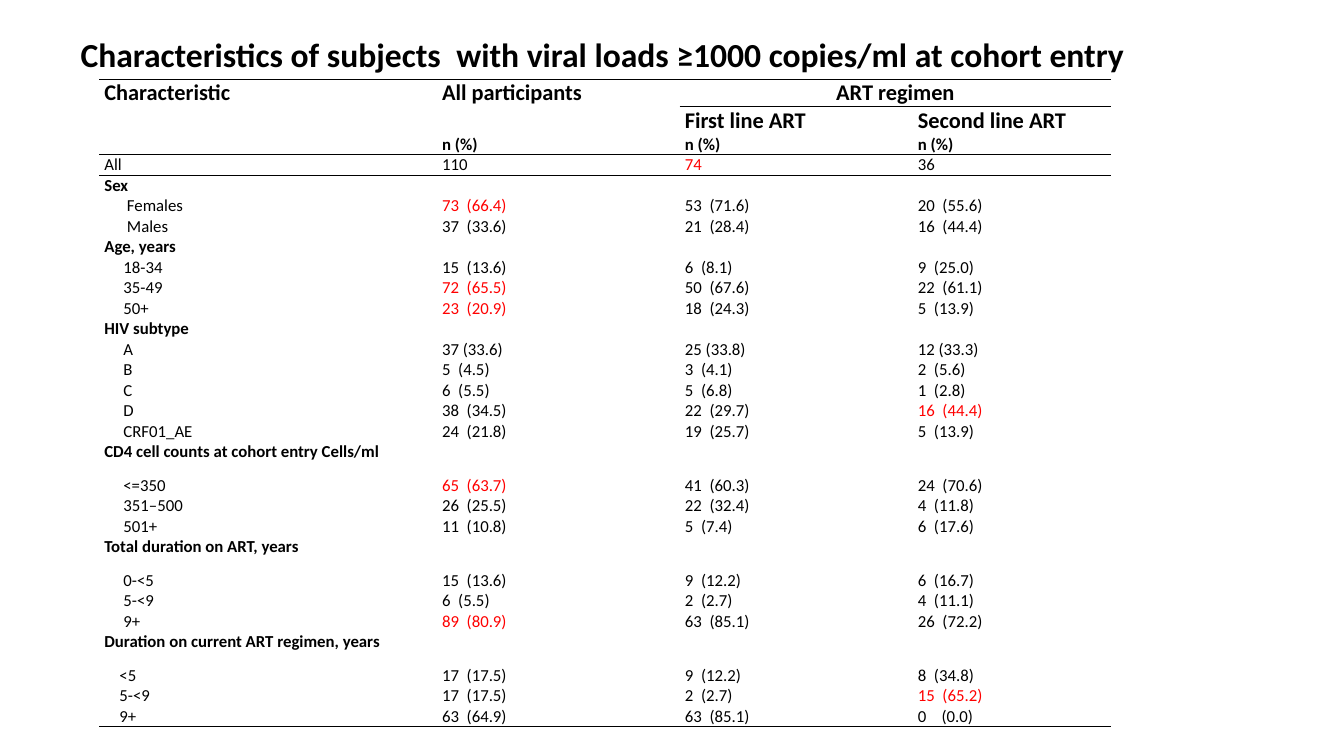
import dataclasses
import typing

import lxml.etree
import pptx
import pptx.dml.color
import pptx.enum.text
import pptx.oxml.ns
import pptx.util

Cm = pptx.util.Cm
Pt = pptx.util.Pt
ALIGN = pptx.enum.text.PP_ALIGN
BLACK = pptx.dml.color.RGBColor(0, 0, 0)
RED = pptx.dml.color.RGBColor(255, 0, 0)
FONT = "Calibri"
SPACE = 0.226
PLAIN = "{2D5ABB26-0587-4C30-8999-92F81FD0307C}"
WIDTHS = (8.51, 6.12, 5.87, 5.0)
RULES = {0: (0, 1, 2, 3), 1: (2, 3), 3: (0, 1, 2, 3), 4: (0, 1, 2, 3), 29: (0, 1, 2, 3)}


@dataclasses.dataclass
class Row:
    texts: tuple[str, ...]
    size: int = 12
    bold: bool = False
    indent: float = 0
    reds: tuple[int, ...] = ()
    height: float = 0.43


def head(*texts: str, size: int = 16) -> Row:
    return Row(texts, size, bold=True)


def group(text: str, height: float = 0.43) -> Row:
    return Row((text, "", "", ""), bold=True, height=height)


def item(*texts: str, reds: tuple[int, ...] = (), indent: float = 0.48) -> Row:
    return Row(texts, indent=indent, reds=reds)


ROWS = [
    head("Characteristic", "All participants", "ART regimen", ""),
    head("", "", "First line ART", "Second line ART"),
    head("", "n (%)", "n (%)", "n (%)", size=12),
    item("All", "110", "74", "36", reds=(2,), indent=0),
    group("Sex"),
    item("Females", "73|(66.4)", "53|(71.6)", "20|(55.6)", reds=(1,), indent=0.57),
    item("Males", "37|(33.6)", "21|(28.4)", "16|(44.4)", indent=0.57),
    group("Age, years"),
    item("18-34", "15|(13.6)", "6|(8.1)", "9|(25.0)"),
    item("35-49", "72|(65.5)", "50|(67.6)", "22|(61.1)", reds=(1,)),
    item("50+", "23|(20.9)", "18|(24.3)", "5|(13.9)", reds=(1,)),
    group("HIV subtype"),
    item("A", "37 (33.6)", "25 (33.8)", "12 (33.3)"),
    item("B", "5|(4.5)", "3|(4.1)", "2|(5.6)"),
    item("C", "6|(5.5)", "5|(6.8)", "1|(2.8)"),
    item("D", "38|(34.5)", "22|(29.7)", "16|(44.4)", reds=(3,)),
    item("CRF01_AE", "24|(21.8)", "19|(25.7)", "5|(13.9)"),
    group("CD4 cell counts at cohort entry Cells/ml", 0.84),
    item("<=350", "65|(63.7)", "41|(60.3)", "24|(70.6)", reds=(1,)),
    item("351–500", "26|(25.5)", "22|(32.4)", "4|(11.8)"),
    item("501+", "11|(10.8)", "5|(7.4)", "6|(17.6)"),
    group("Total duration on ART, years", 0.84),
    item("0-<5", "15|(13.6)", "9|(12.2)", "6|(16.7)"),
    item("5-<9", "6|(5.5)", "2|(2.7)", "4|(11.1)"),
    item("9+", "89|(80.9)", "63|(85.1)", "26|(72.2)", reds=(1,)),
    group("Duration on current ART regimen, years", 0.84),
    item("<5", "17|(17.5)", "9|(12.2)", "8|(34.8)", indent=0.38),
    item("5-<9", "17|(17.5)", "2|(2.7)", "15|(65.2)", reds=(3,), indent=0.38),
    item("9+", "63|(64.9)", "63|(85.1)", "0|||(0.0)", indent=0.38),
]


def write(para: typing.Any, text: str, size: int, bold: bool,
          color: pptx.dml.color.RGBColor = BLACK) -> None:
    first, mark, last = text.partition("|")
    for part in (first, " " if mark else "", last.lstrip("|")):
        if not part:
            continue
        run = para.add_run()
        run.text = part
        run.font.name = FONT
        run.font.size = Pt(size)
        run.font.bold = bold
        run.font.color.rgb = color
        if part == " ":
            extra = text.count("|") * SPACE * size
            run.font._element.set("spc", str(round(extra * 100)))


def rule(cell: typing.Any, tag: str, shown: bool) -> None:
    line = lxml.etree.SubElement(cell._tc.get_or_add_tcPr(), pptx.oxml.ns.qn(tag))
    line.set("w", str(Pt(1)))
    kind = "a:solidFill" if shown else "a:noFill"
    fill = lxml.etree.SubElement(line, pptx.oxml.ns.qn(kind))
    if shown:
        lxml.etree.SubElement(fill, pptx.oxml.ns.qn("a:srgbClr")).set("val", str(BLACK))


def fill_cell(cell: typing.Any, row: Row, num: int, col: int) -> None:
    cell.margin_left = cell.margin_right = Cm(0.13)
    cell.margin_top = cell.margin_bottom = 0
    para = cell.text_frame.paragraphs[0]
    if col == 0 and row.indent:
        props = para._p.get_or_add_pPr()
        props.set("marL", str(Cm(row.indent)))
        props.set("indent", "0")
    if row.texts[col]:
        write(para, row.texts[col], row.size, row.bold, RED if col in row.reds else BLACK)
    else:
        end = lxml.etree.SubElement(para._p, pptx.oxml.ns.qn("a:endParaRPr"))
        end.set("sz", "1200")
    rule(cell, "a:lnL", False)
    rule(cell, "a:lnR", False)
    rule(cell, "a:lnT", col in RULES.get(num, ()))
    rule(cell, "a:lnB", col in RULES.get(num + 1, ()))
    cell.fill.background()


def add_title(slide: typing.Any) -> None:
    box = slide.shapes.add_textbox(Cm(1.78), Cm(0.79), Cm(28.58), Cm(1.22))
    frame = box.text_frame
    frame.word_wrap = True
    frame.vertical_anchor = pptx.enum.text.MSO_ANCHOR.BOTTOM
    para = frame.paragraphs[0]
    para.line_spacing = 0.9
    title = "Characteristics of subjects|with viral loads ≥1000 copies/ml at cohort entry"
    write(para, title, 24, True)


def add_grid(slide: typing.Any) -> None:
    total = sum(row.height for row in ROWS)
    table = slide.shapes.add_table(len(ROWS), len(WIDTHS), Cm(2.5), Cm(2),
                                   Cm(sum(WIDTHS)), Cm(total)).table
    table.first_row = table.horz_banding = False
    table._tbl.tblPr.find(pptx.oxml.ns.qn("a:tableStyleId")).text = PLAIN
    for col, width in enumerate(WIDTHS):
        table.columns[col].width = Cm(width)
    for num, row in enumerate(ROWS):
        table.rows[num].height = Cm(row.height)
        for col in range(len(WIDTHS)):
            fill_cell(table.cell(num, col), row, num, col)
    table.cell(0, 2).merge(table.cell(0, 3))
    table.cell(0, 2).text_frame.paragraphs[0].alignment = ALIGN.CENTER


def main() -> None:
    deck = pptx.Presentation()
    deck.slide_width = Cm(33.87)
    deck.slide_height = Cm(19.05)
    slide = deck.slides.add_slide(deck.slide_layouts[6])
    add_grid(slide)
    add_title(slide)
    deck.save("out.pptx")


if __name__ == "__main__":
    main()
